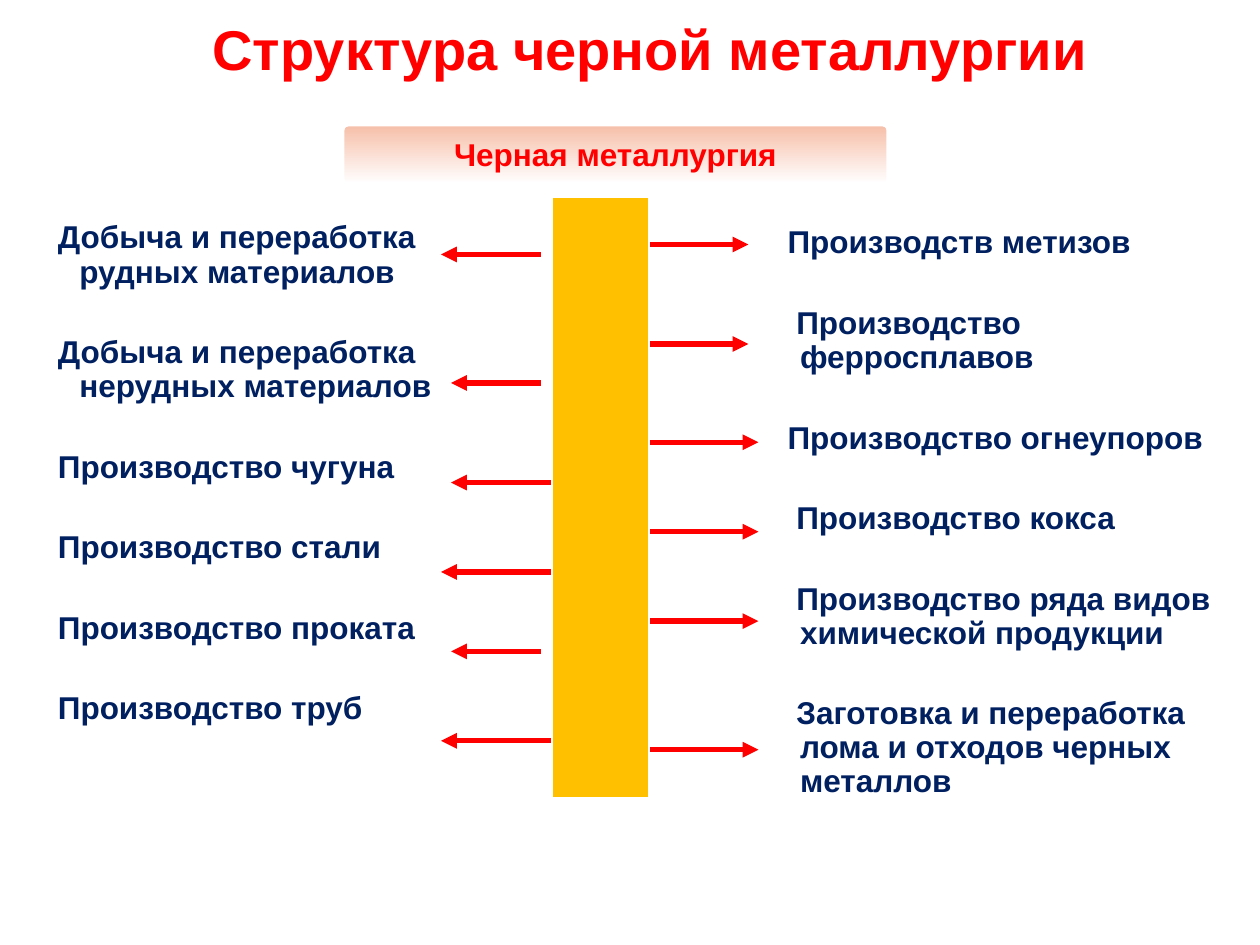
from pptx import Presentation
from pptx.dml.color import RGBColor
from pptx.enum.shapes import MSO_CONNECTOR, MSO_SHAPE
from pptx.enum.text import MSO_ANCHOR, MSO_AUTO_SIZE, PP_ALIGN
from pptx.oxml.ns import qn
from pptx.util import Inches, Pt
from lxml.etree import SubElement

RED = RGBColor(0xFF, 0x00, 0x00)
NAVY = RGBColor(0x00, 0x20, 0x60)
AMBER = RGBColor(0xFF, 0xC0, 0x00)
PEACH = RGBColor(0xF6, 0xBE, 0xA8)
WHITE = RGBColor(0xFF, 0xFF, 0xFF)

TITLE = "Структура черной металлургии"
HEADING = "Черная металлургия"

# Horizontal shares are percent of the slide width, vertical ones of its height.
TITLE_BOX = (6.6, 0, 90, 10.13)
HEADING_BOX = (27.2, 13.2, 43.3, 6.27)
TRUNK_BOX = (43.7, 20.67, 7.9, 64)
HANGING_INDENT = 0.38

# Each branch: text, first-line indent in inches, then arrow height, start and tip.
BRANCHES = [
    {
        "box": (1.5, 22.8, 39.4, 66),
        "items": [
            ("Добыча и переработка рудных материалов", 0.21, 26.93, 42.9, 35),
            ("Добыча и переработка нерудных материалов", 0.21, 40.53, 42.9, 35.8),
            ("Производство чугуна", 0.21, 51.07, 43.7, 35.8),
            ("Производство стали", 0.21, 60.53, 43.7, 35),
            ("Производство проката", 0.21, 68.93, 42.9, 35.8),
            ("Производство труб", 0.21, 78.4, 43.7, 35),
        ],
    },
    {
        "box": (58.7, 23.33, 41.3, 66),
        "items": [
            ("Производств метизов", 0.28, 25.87, 51.6, 59.4),
            ("Производство ферросплавов", 0.35, 36.4, 51.6, 59.4),
            ("Производство огнеупоров", 0.28, 46.8, 51.6, 60.2),
            ("Производство кокса", 0.35, 56.27, 51.6, 60.2),
            ("Производство ряда видов химической продукции", 0.35, 65.73, 51.6, 60.2),
            ("Заготовка и переработка лома и отходов черных металлов",
             0.35, 79.33, 51.6, 60.2),
        ],
    },
]

prs = Presentation()
prs.slide_width, prs.slide_height = Inches(10), Inches(7.5)
slide = prs.slides.add_slide(prs.slide_layouts.get_by_name("Two Content"))


def across(percent):
    return round(prs.slide_width * percent / 100)


def down(percent):
    return round(prs.slide_height * percent / 100)


def to_emu(box):
    left, top, width, height = box
    return across(left), down(top), across(width), down(height)


def place(placeholder, box):
    placeholder.left, placeholder.top, placeholder.width, placeholder.height = to_emu(box)
    placeholder.text_frame.auto_size = MSO_AUTO_SIZE.NONE


def write(paragraph, text, size=18, color=RED, align=PP_ALIGN.CENTER,
          first_indent=None, before=0, spacing=1.0):
    """Fill a paragraph; first_indent makes it an unbulleted hanging one."""
    if first_indent is not None:
        properties = paragraph._p.get_or_add_pPr()
        properties.set("marL", str(Inches(HANGING_INDENT)))
        properties.set("indent", str(Inches(first_indent - HANGING_INDENT)))
        SubElement(properties, qn("a:buNone"))
    paragraph.alignment = align
    paragraph.space_before = Pt(before)
    paragraph.line_spacing = spacing
    run = paragraph.add_run()
    run.text = text
    run.font.name, run.font.size, run.font.bold = "Arial", Pt(size), True
    run.font.color.rgb = color


def add_block(preset, box, outline):
    block = slide.shapes.add_shape(preset, *to_emu(box))
    block.shadow.inherit = False
    block.line.color.rgb = WHITE
    block.line.width = Pt(outline)
    return block


def add_arrow(height, start, tip):
    arrow = slide.shapes.add_connector(
        MSO_CONNECTOR.STRAIGHT, across(start), down(height), across(tip), down(height))
    arrow.line.color.rgb = RED
    arrow.line.width = Pt(3)
    SubElement(arrow.line._get_or_add_ln(), qn("a:tailEnd"), type="triangle")
    SubElement(arrow._element.spPr, qn("a:effectLst"))


title, *bodies = slide.placeholders
place(title, TITLE_BOX)
title.text_frame.vertical_anchor = MSO_ANCHOR.MIDDLE
write(title.text_frame.paragraphs[0], TITLE, size=32)

heading = add_block(MSO_SHAPE.ROUNDED_RECTANGLE, HEADING_BOX, outline=2)
heading.adjustments[0] = 0.09
heading.fill.gradient()
heading.fill.gradient_angle = 270
for stop, color in zip(heading.fill.gradient_stops, (PEACH, WHITE)):
    stop.color.rgb = color
heading.text_frame.word_wrap = False
heading.text_frame.vertical_anchor = MSO_ANCHOR.MIDDLE
write(heading.text_frame.paragraphs[0], HEADING)

trunk = add_block(MSO_SHAPE.RECTANGLE, TRUNK_BOX, outline=3)
trunk.fill.solid()
trunk.fill.fore_color.rgb = AMBER

for body, branch in zip(bodies, BRANCHES):
    place(body, branch["box"])
    frame = body.text_frame
    for row, (text, first_indent, height, start, tip) in enumerate(branch["items"]):
        paragraph = frame.add_paragraph() if row else frame.paragraphs[0]
        write(paragraph, text, color=NAVY, align=PP_ALIGN.LEFT,
              first_indent=first_indent, before=26.6 if row else 0, spacing=0.9)
        add_arrow(height, start, tip)

# Footer-type placeholders are not copied to the slide, so only these three exist.
prs.save("out.pptx")
